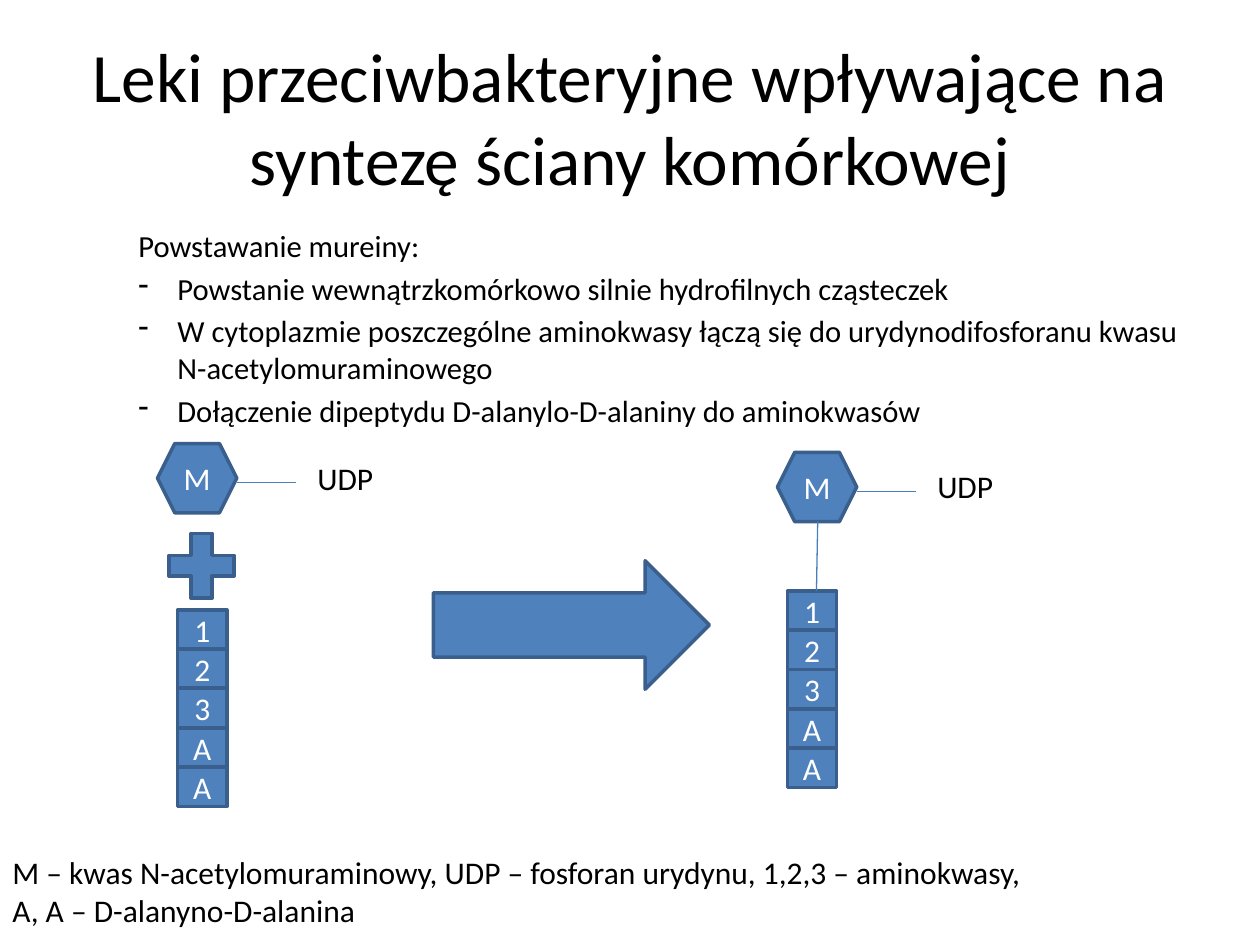
from lxml import etree
from pptx import Presentation
from pptx.dml.color import RGBColor
from pptx.enum.shapes import MSO_CONNECTOR, MSO_SHAPE
from pptx.enum.text import MSO_ANCHOR, MSO_AUTO_SIZE, PP_ALIGN
from pptx.oxml.ns import qn
from pptx.util import Inches, Pt

BLUE, EDGE, BOND = "4F81BD", "3A5F8C", "4B7EBC"
BLACK, WHITE = "000000", "FFFFFF"


def style_text(frame, size, color, align=PP_ALIGN.LEFT):
    for para in frame.paragraphs:
        para.alignment = align
        for span in para.runs:
            span.font.name = "Calibri"
            span.font.size = Pt(size)
            span.font.color.rgb = RGBColor.from_string(color)


def add_blue_shape(kind, left, top, width, height, label=""):
    shape = slide.shapes.add_shape(
        kind, Inches(left), Inches(top), Inches(width), Inches(height))
    shape.shadow.inherit = False
    shape.fill.solid()
    shape.fill.fore_color.rgb = RGBColor.from_string(BLUE)
    shape.line.color.rgb = RGBColor.from_string(EDGE)
    shape.line.width = Pt(2)
    if label:
        shape.text_frame.text = label
        shape.text_frame.vertical_anchor = MSO_ANCHOR.MIDDLE
        style_text(shape.text_frame, 18, WHITE, PP_ALIGN.CENTER)


deck = Presentation()
deck.slide_width, deck.slide_height = Inches(10), Inches(7.5)
slide = deck.slides.add_slide(deck.slide_layouts[5])

title = slide.shapes.title
title.left, title.top = Inches(0.5), Inches(0.3)
title.width, title.height = Inches(9), Inches(1.25)
title.text_frame.text = "Leki przeciwbakteryjne wpływające na syntezę ściany komórkowej"
title.text_frame.vertical_anchor = MSO_ANCHOR.MIDDLE
style_text(title.text_frame, 39.6, BLACK, PP_ALIGN.CENTER)

# Stages of murein formation
stages = slide.shapes.add_textbox(Inches(0.5), Inches(1.75), Inches(9), Inches(1.53))
stages.text_frame.word_wrap = True
stages.text_frame.text = "\n".join([
    "Powstawanie mureiny:",
    "Powstanie wewnątrzkomórkowo silnie hydrofilnych cząsteczek",
    "W cytoplazmie poszczególne aminokwasy łączą się do urydynodifosforanu kwasu "
    "N-acetylomuraminowego",
    "Dołączenie dipeptydu D-alanylo-D-alaniny do aminokwasów",
])
style_text(stages.text_frame, 17.5, BLACK)
for index, para in enumerate(stages.text_frame.paragraphs):
    para.space_before = Pt(3.5)
    properties = para._p.get_or_add_pPr()
    properties.set("marL", str(Inches(0.81)))
    properties.set("indent", str(Inches(-0.31)))
    if index:
        etree.SubElement(properties, qn("a:buChar"), char="-")
    else:
        etree.SubElement(properties, qn("a:buNone"))

# Substrates on the left, product on the right
bonds = [(6.49, 4.14, 6.48, 4.69)]
for left, top, chain_left, chain_top in [(1.25, 3.52, 1.41, 4.84), (6.17, 3.59, 6.25, 4.69)]:
    add_blue_shape(MSO_SHAPE.HEXAGON, left, top, 0.63, 0.55, "M")
    bonds.append((left + 0.63, top + 0.31, left + 1.1, top + 0.31))
    udp = slide.shapes.add_textbox(
        Inches(left + 1.17), Inches(top + 0.07), Inches(0.65), Inches(0.4))
    udp.text_frame.word_wrap = False
    udp.text_frame.auto_size = MSO_AUTO_SIZE.SHAPE_TO_FIT_TEXT
    udp.text_frame.text = "UDP"
    style_text(udp.text_frame, 18, BLACK)
    for index, residue in enumerate("123AA"):
        add_blue_shape(MSO_SHAPE.RECTANGLE, chain_left, chain_top + index * 0.3125,
                       0.39, 0.31, residue)

for x1, y1, x2, y2 in bonds:
    bond = slide.shapes.add_connector(
        MSO_CONNECTOR.STRAIGHT, Inches(x1), Inches(y1), Inches(x2), Inches(y2))
    bond.line.color.rgb = RGBColor.from_string(BOND)
    bond.line.width = Pt(0.75)
    etree.SubElement(bond._element.spPr, qn("a:effectLst"))

add_blue_shape(MSO_SHAPE.MATH_PLUS, 1.25, 4.14, 0.7, 0.7)
add_blue_shape(MSO_SHAPE.RIGHT_ARROW, 3.44, 4.45, 2.19, 1.02)

legend = slide.shapes.add_textbox(Inches(0), Inches(6.72), Inches(9.84), Inches(0.71))
legend.text_frame.word_wrap = True
legend.text_frame.auto_size = MSO_AUTO_SIZE.SHAPE_TO_FIT_TEXT
legend.text_frame.text = (
    "M – kwas N-acetylomuraminowy, UDP – fosforan urydynu, 1,2,3 – aminokwasy,\n"
    "A, A – D-alanyno-D-alanina")
style_text(legend.text_frame, 18, BLACK)

deck.save("out.pptx")
